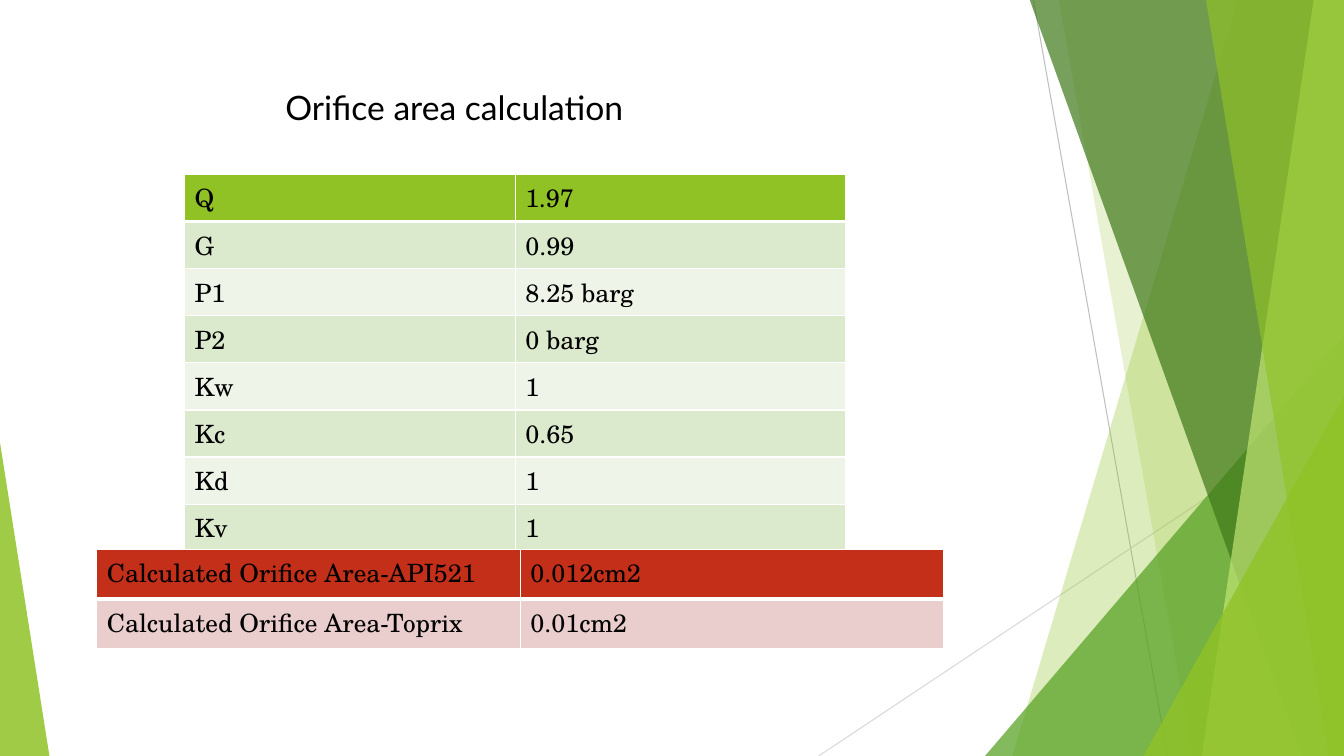
import pptx
import pptx.util
import pptx.dml.color
import pptx.enum.shapes
import pptx.enum.text
import pptx.oxml
import pptx.oxml.ns
from lxml import etree

Inches = pptx.util.Inches
Pt = pptx.util.Pt
WIDTH, HEIGHT = 13.33, 7.5
COLORS = {
    "text": "000000", "border": "FFFFFF",
    "gray": "BFBFBF", "pale_gray": "D9D9D9",
    "lime": "90C226", "green": "54A021", "forest": "3F7819", "pale_lime": "C0E474",
    "band": "DBE9CD", "pale_band": "EEF4E8",
    "red": "C42F1A", "pink": "EACDCD",
}


class SlideBuilder:
    title_font = "Lato"
    table_font = "TeX Gyre Schola"

    def __init__(self, presentation):
        self.slide = presentation.slides.add_slide(presentation.slide_layouts[5])
        self.shapes = self.slide.shapes

    def color(self, name):
        return pptx.dml.color.RGBColor.from_string(COLORS[name])

    def style_text(self, paragraph, font, size):
        for run in paragraph.runs:
            run.font.name = font
            run.font.size = Pt(size)
            run.font.bold = False
            run.font.color.rgb = self.color("text")

    def title(self, text, left, top):
        heading = self.shapes.title
        heading.left, heading.top = Inches(0), Inches(0)
        heading.width, heading.height = Inches(WIDTH), Inches(HEIGHT)
        frame = heading.text_frame
        frame.text = text
        frame.margin_left, frame.margin_top = Inches(left), Inches(top)
        frame.vertical_anchor = pptx.enum.text.MSO_ANCHOR.TOP
        frame.paragraphs[0].alignment = pptx.enum.text.PP_ALIGN.LEFT
        self.style_text(frame.paragraphs[0], self.title_font, 24)

    def line(self, start, end, color):
        ray = self.shapes.add_connector(
            pptx.enum.shapes.MSO_CONNECTOR.STRAIGHT,
            *(Inches(value) for value in (*start, *end)))
        ray.line.color.rgb = self.color(color)
        ray.line.width = Pt(0.75)
        etree.SubElement(ray._element.spPr, pptx.oxml.ns.qn("a:effectLst"))

    def paint(self, facet, color, opacity):
        facet.shadow.inherit = False
        facet.line.fill.background()
        facet.fill.solid()
        facet.fill.fore_color.rgb = self.color(color)
        tint = facet._element.spPr.find(".//" + pptx.oxml.ns.qn("a:srgbClr"))
        etree.SubElement(tint, pptx.oxml.ns.qn("a:alpha"), val=str(opacity * 1000))

    def pane(self, top_x, bottom_x, color, opacity):
        corners = [(top_x, -0.01), (WIDTH, -0.01), (WIDTH, HEIGHT), (bottom_x, HEIGHT)]
        corners = [(Inches(x), Inches(y)) for x, y in corners]
        outline = self.shapes.build_freeform(*corners[0], scale=1.0)
        outline.add_line_segments(corners[1:], close=True)
        self.paint(outline.convert_to_shape(), color, opacity)

    def triangle(self, left, top, width, apex, color, opacity):
        facet = self.shapes.add_shape(
            pptx.enum.shapes.MSO_SHAPE.ISOSCELES_TRIANGLE,
            Inches(left), Inches(top), Inches(width), Inches(HEIGHT - top))
        facet.adjustments[0] = apex
        self.paint(facet, color, opacity)

    def borders(self, cell, top, bottom):
        properties = cell._tc.get_or_add_tcPr()
        sides = {"lnL": 1, "lnR": 1, "lnT": top, "lnB": bottom}
        for index, (side, width) in enumerate(sides.items()):
            properties.insert(index, pptx.oxml.parse_xml(
                f'<a:{side} {pptx.oxml.ns.nsdecls("a")} w="{Pt(width)}"><a:solidFill>'
                f'<a:srgbClr val="{COLORS["border"]}"/></a:solidFill></a:{side}>'))

    def table(self, rows, left, top, column_width, row_height, header, bands):
        grid = self.shapes.add_table(
            len(rows), 2, Inches(left), Inches(top),
            Inches(2 * column_width), Inches(row_height * len(rows))).table
        for row_index, values in enumerate(rows):
            fill = bands[(row_index - 1) % len(bands)] if row_index else header
            for column_index, value in enumerate(values):
                cell = grid.cell(row_index, column_index)
                cell.text_frame.text = value
                self.style_text(cell.text_frame.paragraphs[0], self.table_font, 18)
                cell.fill.solid()
                cell.fill.fore_color.rgb = self.color(fill)
                self.borders(cell, 3 if row_index == 1 else 1, 3 if row_index == 0 else 1)


def main():
    presentation = pptx.Presentation()
    presentation.slide_width = Inches(WIDTH)
    presentation.slide_height = Inches(HEIGHT)
    builder = SlideBuilder(presentation)

    builder.line((10.25, 0), (11.58, HEIGHT), "gray")
    builder.line((WIDTH, 4.03), (8.12, HEIGHT), "pale_gray")
    builder.pane(12.28, 10.04, "lime", 30)
    builder.pane(10.5, 11.83, "lime", 20)
    builder.triangle(9.77, 3.33, 3.56, 1, "green", 72)
    builder.pane(10.21, 12.91, "forest", 70)
    builder.pane(13.03, 11.92, "pale_lime", 70)
    builder.pane(11.96, 13.18, "lime", 65)
    builder.triangle(11.34, 3.93, 1.99, 1, "lime", 80)
    builder.triangle(0, 4.39, 0.49, 0, "lime", 85)

    builder.title("Orifice area calculation", 2.83, 0.86)
    parameters = [
        ("Q", "1.97"), ("G", "0.99"), ("P1", "8.25 barg"), ("P2", "0 barg"),
        ("Kw", "1"), ("Kc", "0.65"), ("Kd", "1"), ("Kv", "1"),
    ]
    builder.table(parameters, 1.83, 1.73, 3.28, 0.43, "lime", ["band", "pale_band"])
    orifice_areas = [
        ("Calculated Orifice Area-API521", "0.012cm2"),
        ("Calculated Orifice Area-Toprix", "0.01cm2"),
    ]
    builder.table(orifice_areas, 0.96, 5.45, 4.2, 0.49, "red", ["pink"])
    presentation.save("out.pptx")


if __name__ == "__main__":
    main()
